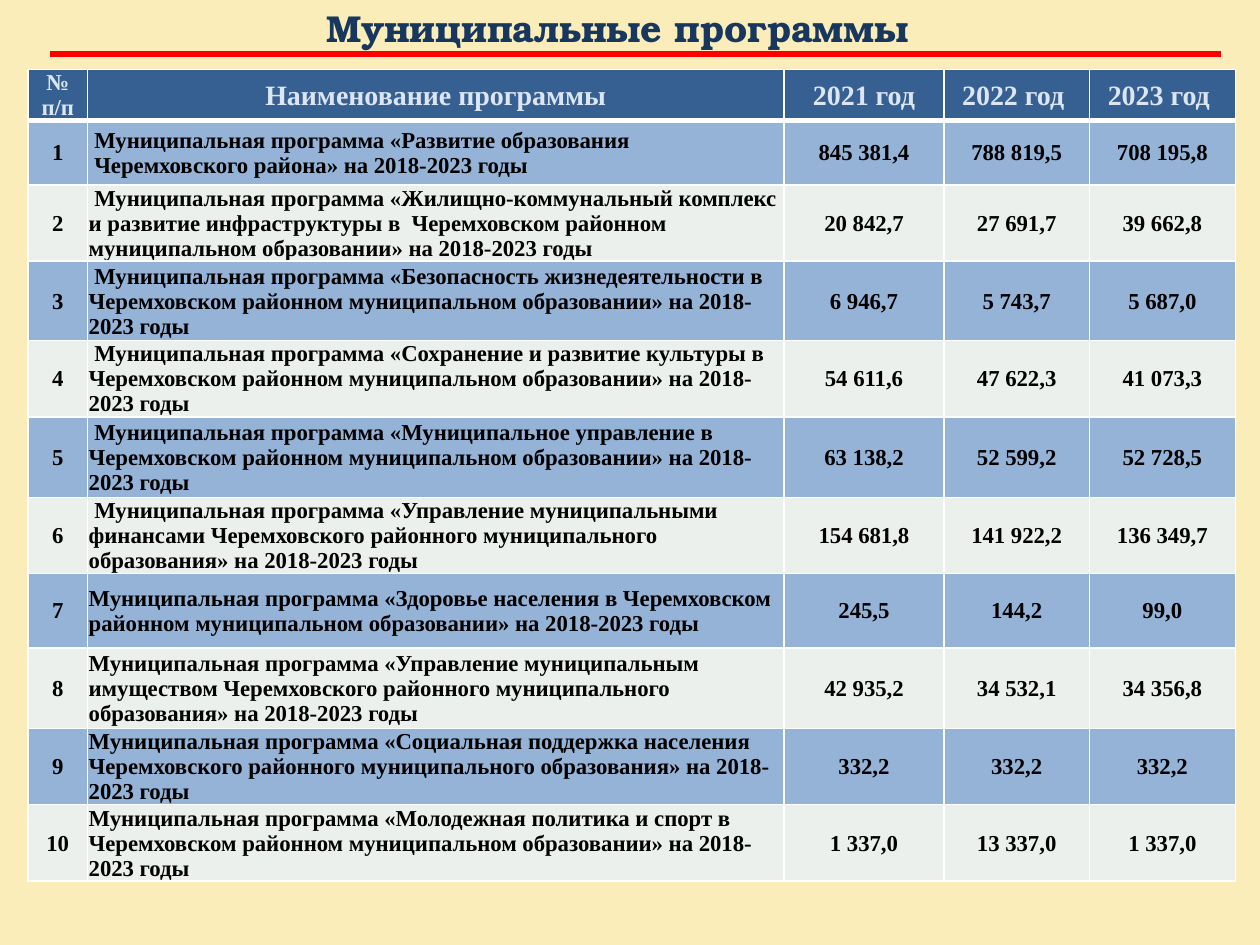
from dataclasses import dataclass

from lxml import etree
from pptx import Presentation
from pptx.dml.color import RGBColor
from pptx.enum import shapes, text
from pptx.oxml.ns import qn
from pptx.util import Pt


@dataclass(frozen=True)
class Theme:
    page: str = "F9E9A7"
    page_opacity: int = 78
    title: str = "17375E"
    rule: str = "FF0000"
    header: str = "376092"
    header_text: str = "DCE6F2"
    odd_row: str = "95B3D7"
    even_row: str = "EBF0EC"
    body_text: str = "000000"
    border: str = "FFFFFF"
    title_font: str = "TeX Gyre Bonum"
    table_font: str = "Times New Roman"
    title_size: float = 21.4
    header_size: float = 16
    body_size: float = 13


@dataclass(frozen=True)
class Column:
    heading: str
    width: float
    size: float = Theme.header_size


@dataclass(frozen=True)
class Program:
    height: float
    name: str
    amounts: tuple[str, str, str]


THEME = Theme()
HEADER_HEIGHT = 28
COLUMNS = [
    Column("№ п/п", 34, THEME.body_size),
    Column("Наименование программы", 398),
    Column("2021 год", 91.5),
    Column("2022 год ", 83),
    Column("2023 год ", 83.5),
]
PROGRAMS = [
    Program(36.7, " Муниципальная программа «Развитие образования\n"
            " Черемховского района» на 2018-2023 годы",
            ("845 381,4", "788 819,5", "708 195,8")),
    Program(40.3, " Муниципальная программа «Жилищно-коммунальный комплекс и развитие "
            "инфраструктуры в  Черемховском районном муниципальном образовании» на 2018-2023 годы",
            ("20 842,7", "27 691,7", "39 662,8")),
    Program(45.4, " Муниципальная программа «Безопасность жизнедеятельности в "
            "Черемховском районном муниципальном образовании» на 2018-2023 годы",
            ("6 946,7", "5 743,7", "5 687,0")),
    Program(41.8, " Муниципальная программа «Сохранение и развитие культуры в "
            "Черемховском районном муниципальном образовании» на 2018-2023 годы",
            ("54 611,6", "47 622,3", "41 073,3")),
    Program(46, " Муниципальная программа «Муниципальное управление в "
            "Черемховском районном муниципальном образовании» на 2018-2023 годы",
            ("63 138,2", "52 599,2", "52 728,5")),
    Program(43.2, " Муниципальная программа «Управление муниципальными финансами "
            "Черемховского районного муниципального образования» на 2018-2023 годы",
            ("154 681,8", "141 922,2", "136 349,7")),
    Program(42.5, "Муниципальная программа «Здоровье населения в "
            "Черемховском районном муниципальном образовании» на 2018-2023 годы",
            ("245,5", "144,2", "99,0")),
    Program(46, "Муниципальная программа «Управление муниципальным имуществом "
            "Черемховского районного муниципального образования» на 2018-2023 годы",
            ("42 935,2", "34 532,1", "34 356,8")),
    Program(38.9, "Муниципальная программа «Социальная поддержка населения "
            "Черемховского районного муниципального образования» на 2018-2023 годы",
            ("332,2", "332,2", "332,2")),
    Program(39.6, "Муниципальная программа «Молодежная политика и спорт в "
            "Черемховском районном муниципальном образовании» на 2018-2023 годы",
            ("1 337,0", "13 337,0", "1 337,0")),
]


def color(value: str) -> RGBColor:
    return RGBColor.from_string(value)


def set_font(para, name: str, size: float, value: str) -> None:
    font = para.font
    font.name, font.size, font.bold = name, Pt(size), True
    font.color.rgb = color(value)


def paint_page(page) -> None:
    fill = page.background.fill
    fill.solid()
    fill.fore_color.rgb = color(THEME.page)
    tint = next(page.background._cSld.iter(qn("a:srgbClr")))
    etree.SubElement(tint, qn("a:alpha"), val=str(THEME.page_opacity * 1000))


def set_borders(cell, top: float, bottom: float) -> None:
    """Insert the four border lines ahead of the cell's fill, as the schema requires."""
    properties = cell._tc.get_or_add_tcPr()
    widths = {"lnL": 1, "lnR": 1, "lnT": top, "lnB": bottom}
    for position, (side, width) in enumerate(widths.items()):
        line = etree.Element(qn(f"a:{side}"), w=str(Pt(width)))
        fill = etree.SubElement(line, qn("a:solidFill"))
        etree.SubElement(fill, qn("a:srgbClr"), val=THEME.border)
        properties.insert(position, line)


def fill_cell(cell, words: str, size: float, ink: str, fill: str, centered: bool) -> None:
    cell.text = words
    cell.vertical_anchor = text.MSO_ANCHOR.MIDDLE
    cell.margin_left = cell.margin_right = cell.margin_top = Pt(0.72)
    cell.margin_bottom = 0
    cell.fill.solid()
    cell.fill.fore_color.rgb = color(fill)
    for para in cell.text_frame.paragraphs:
        para.alignment = text.PP_ALIGN.CENTER if centered else text.PP_ALIGN.LEFT
        set_font(para, THEME.table_font, size, ink)


def add_programs(page) -> None:
    heights = [HEADER_HEIGHT] + [program.height for program in PROGRAMS]
    width = sum(column.width for column in COLUMNS)
    table = page.shapes.add_table(len(heights), len(COLUMNS), Pt(16), Pt(39.6),
                                  Pt(width), Pt(sum(heights))).table
    table.horz_banding = False
    for slot, column in zip(table.columns, COLUMNS):
        slot.width = Pt(column.width)
    for row, height in zip(table.rows, heights):
        row.height = Pt(height)

    for index, column in enumerate(COLUMNS):
        cell = table.cell(0, index)
        fill_cell(cell, column.heading, column.size, THEME.header_text, THEME.header, True)
        set_borders(cell, 1, 3)
    for number, program in enumerate(PROGRAMS, start=1):
        fill = THEME.odd_row if number % 2 else THEME.even_row
        for index, words in enumerate((str(number), program.name, *program.amounts)):
            cell = table.cell(number, index)
            fill_cell(cell, words, THEME.body_size, THEME.body_text, fill, index != 1)
            set_borders(cell, 3 if number == 1 else 1, 1)


def add_title(page) -> None:
    box = page.shapes.add_textbox(Pt(-5.8), 0, Pt(703.4), Pt(31))
    frame = box.text_frame
    frame.word_wrap = True
    frame.vertical_anchor = text.MSO_ANCHOR.MIDDLE
    frame.margin_left = Pt(21)
    para = frame.paragraphs[0]
    para.text = "Муниципальные программы"
    para.alignment = text.PP_ALIGN.CENTER
    set_font(para, THEME.title_font, THEME.title_size, THEME.title)


def add_title_rule(page) -> None:
    rule = page.shapes.add_connector(shapes.MSO_CONNECTOR.STRAIGHT,
                                     Pt(28.8), Pt(31), Pt(697.7), Pt(31))
    rule.line.color.rgb = color(THEME.rule)
    rule.line.width = Pt(3.75)
    etree.SubElement(rule._element.spPr, qn("a:effectLst"))


def main() -> None:
    deck = Presentation()
    deck.slide_width, deck.slide_height = Pt(720), Pt(540)
    page = deck.slides.add_slide(deck.slide_layouts[6])
    paint_page(page)
    add_programs(page)
    add_title(page)
    add_title_rule(page)
    deck.save("out.pptx")


if __name__ == "__main__":
    main()
